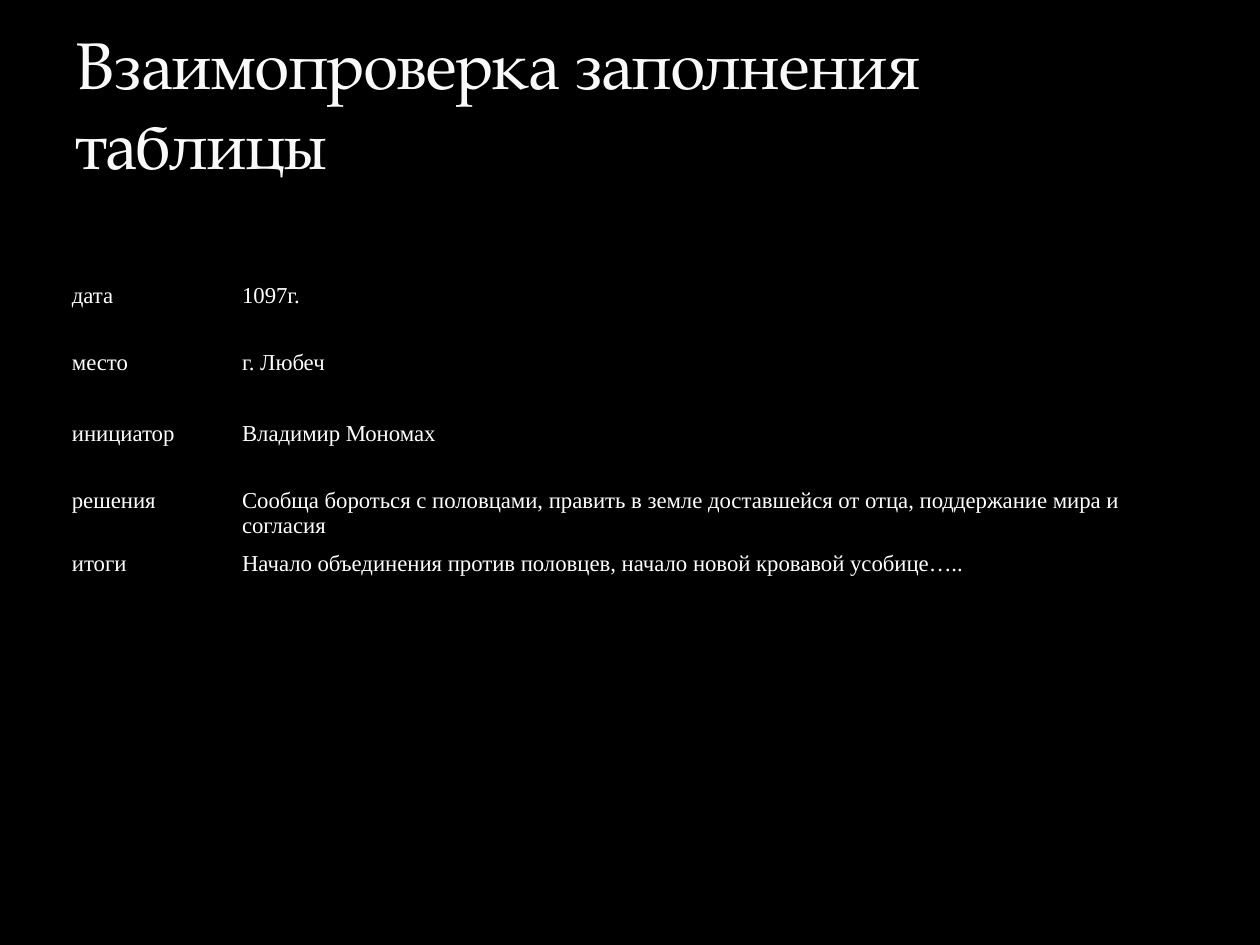
from lxml import etree
from pptx import Presentation
from pptx.dml.color import RGBColor
from pptx.enum.text import MSO_ANCHOR, PP_ALIGN
from pptx.oxml.ns import qn
from pptx.util import Cm, Pt

BLACK = RGBColor(0x00, 0x00, 0x00)
WHITE = RGBColor(0xFF, 0xFF, 0xFF)
OFF_WHITE = RGBColor(0xF9, 0xF9, 0xF9)
TOP, BOTTOM = MSO_ANCHOR.TOP, MSO_ANCHOR.BOTTOM
LEFT = PP_ALIGN.LEFT

HEADING = "Взаимопроверка заполнения таблицы"
FACTS = [
    ("дата", "1097г.", 1.35),
    ("место", "г. Любеч", 1.42),
    ("инициатор", "Владимир Мономах", 1.35),
    ("решения", "Сообща бороться с половцами, править в земле доставшейся от отца, "
     "поддержание мира и согласия", 1.27),
    ("итоги", "Начало объединения против половцев, начало новой кровавой усобице…..", 1.42),
]
COLUMN_WIDTHS = (3.43, 19.43)
MARGIN = 1.27
CONTENT_WIDTH = sum(COLUMN_WIDTHS)


def write(frame, text, font, size, color, spacing=None):
    paragraph = frame.paragraphs[0]
    paragraph.alignment = LEFT
    run = paragraph.add_run()
    run.text = text
    run.font.name = font
    run.font.size = Pt(size)
    run.font.color.rgb = color
    if spacing is not None:
        run.font._element.set("spc", str(spacing))


def add_borders(cell, color, width):
    properties = cell._tc.get_or_add_tcPr()
    for side in ("lnL", "lnR", "lnT", "lnB"):
        border = etree.SubElement(properties, qn(f"a:{side}"), w=str(Pt(width)))
        fill = etree.SubElement(border, qn("a:solidFill"))
        etree.SubElement(fill, qn("a:srgbClr"), val=str(color))


def fill_cell(cell, text):
    cell.margin_left = cell.margin_right = Cm(0.18)
    cell.margin_top = cell.margin_bottom = 0
    cell.vertical_anchor = TOP
    add_borders(cell, BLACK, 1)
    cell.fill.background()
    write(cell.text_frame, text, font="Times New Roman", size=13, color=WHITE)


def main():
    deck = Presentation()
    deck.slide_width, deck.slide_height = Cm(25.4), Cm(19.05)
    slide = deck.slides.add_slide(deck.slide_layouts[5])
    slide.background.fill.solid()
    slide.background.fill.fore_color.rgb = BLACK

    heights = [height for _, _, height in FACTS]
    table = slide.shapes.add_table(
        len(FACTS), len(COLUMN_WIDTHS),
        Cm(MARGIN), Cm(5.72), Cm(CONTENT_WIDTH), Cm(sum(heights))).table
    table.first_row = table.horz_banding = False
    for column, width in zip(table.columns, COLUMN_WIDTHS):
        column.width = Cm(width)
    for row, (label, answer, height) in zip(table.rows, FACTS):
        row.height = Cm(height)
        for cell, text in zip(row.cells, (label, answer)):
            fill_cell(cell, text)

    title = slide.shapes.title
    title.left, title.top = Cm(MARGIN), Cm(0.43)
    title.width, title.height = Cm(CONTENT_WIDTH), Cm(3.38)
    title.text_frame.word_wrap = True
    title.text_frame.vertical_anchor = BOTTOM
    write(title.text_frame, HEADING, font="TeX Gyre Pagella", size=37.8,
          color=OFF_WHITE, spacing=-100)

    deck.save("out.pptx")


if __name__ == "__main__":
    main()
